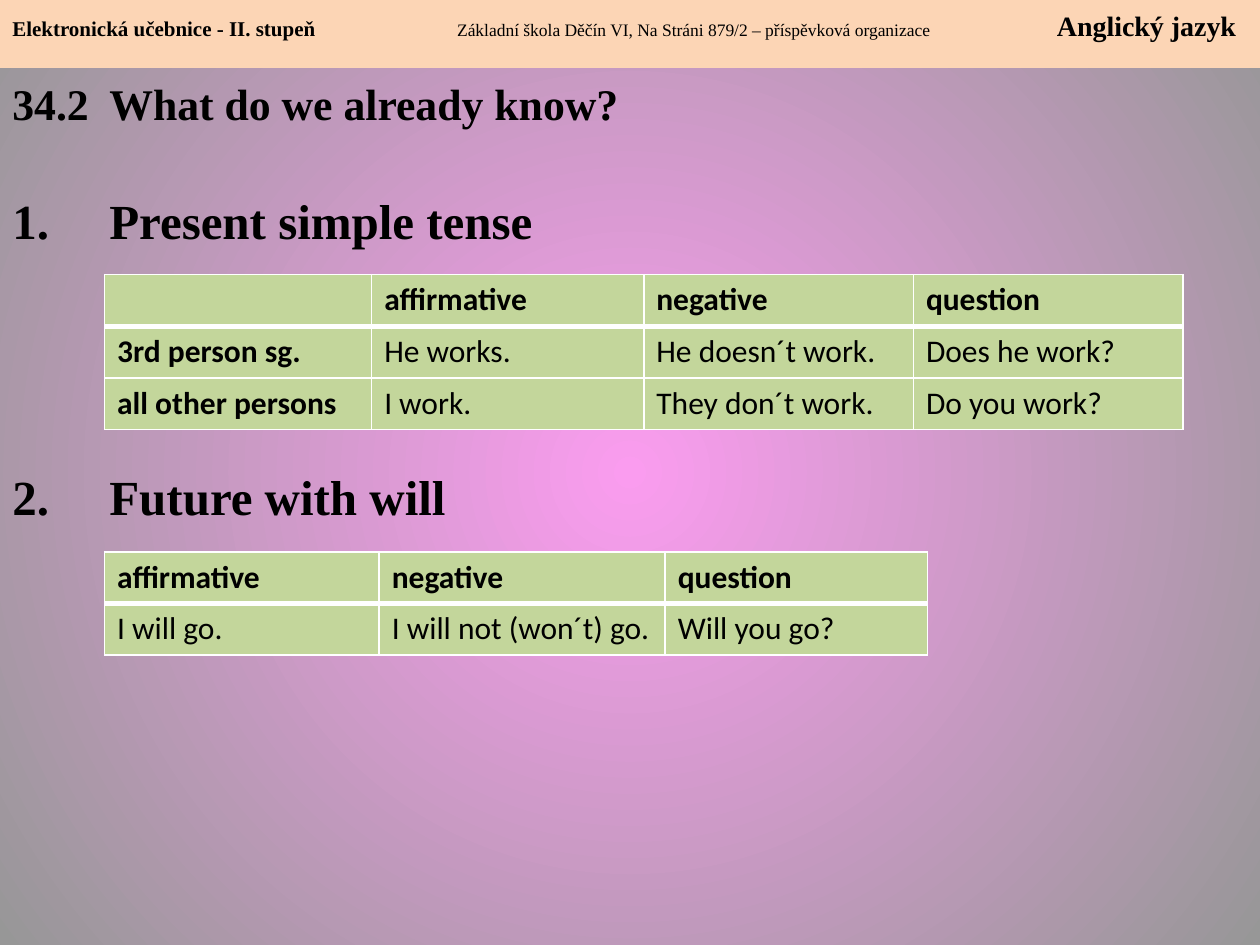
"""Build an English grammar review slide with two tense tables."""
from lxml import etree
from pptx import Presentation
from pptx import util as u
from pptx.dml import color
from pptx.enum import shapes, text
from pptx.oxml import ns


def rgb(value):
    return color.RGBColor.from_string(value)


def add_span(para, wording, font, size, bold):
    span = para.add_run()
    span.text = wording
    style = {"name": font, "size": u.Pt(size), "bold": bold}
    for name, value in style.items():
        setattr(span.font, name, value)
    span.font.color.rgb = rgb("000000")


SERIF = "Times New Roman"
deck = Presentation()
deck.slide_width, deck.slide_height = u.Inches(10), u.Inches(7.5)
page = deck.slides.add_slide(deck.slide_layouts[6])

backdrop = page.background.fill
backdrop.gradient()
for stop, shade in zip(backdrop.gradient_stops, ["FA9CEF", "979797"]):
    stop.color.rgb = rgb(shade)
gradient = next(page.element.iter(ns.qn("a:gradFill")))
gradient.remove(gradient.find(ns.qn("a:lin")))
circle = etree.SubElement(gradient, ns.qn("a:path"), path="circle")
etree.SubElement(circle, ns.qn("a:fillToRect"), l="50000", t="50000", r="50000", b="50000")

box = page.shapes.add_textbox(u.Inches(0), u.Inches(0.56), u.Inches(9.57), u.Inches(6.94))
box.text_frame.word_wrap = True
headings = [
    ("34.2\tWhat do we already know?", 25, 0, None),
    ("Present simple tense", 28, 35, 1),
    ("Future with will", 28, 124, 2),
]
for wording, size, gap, number in headings:
    first = box.text_frame.paragraphs[0]
    para = box.text_frame.add_paragraph() if first.runs else first
    para.space_before = u.Pt(gap)
    props = para._p.get_or_add_pPr()
    props.set("marL", str(u.Inches(0.77)))
    props.set("indent", str(-u.Inches(0.77)))
    if number:
        etree.SubElement(props, ns.qn("a:buFont"), typeface=SERIF)
        etree.SubElement(props, ns.qn("a:buAutoNum"), type="arabicPeriod", startAt=str(number))
    add_span(para, wording, SERIF, size, True)

band = page.shapes.add_shape(
    shapes.MSO_SHAPE.RECTANGLE, u.Inches(0), u.Inches(0), u.Inches(10), u.Inches(0.54))
band.shadow.inherit = False
band.fill.solid()
band.fill.fore_color.rgb = rgb("FCD5B5")
band.line.fill.background()
frame = band.text_frame
for name, value in {
    "word_wrap": True,
    "vertical_anchor": text.MSO_ANCHOR.TOP,
    "margin_top": u.Inches(0.07),
}.items():
    setattr(frame, name, value)
para = frame.paragraphs[0]
para.alignment = text.PP_ALIGN.LEFT
tabs = etree.SubElement(para._p.get_or_add_pPr(), ns.qn("a:tabLst"))
for place in [3.53, 8.29]:
    etree.SubElement(tabs, ns.qn("a:tab"), pos=str(u.Inches(place)), algn="l")
for wording, size, bold in [
    ("Elektronická učebnice - II. stupeň\t", 12, True),
    ("Základní škola Děčín VI, Na Stráni 879/2 – příspěvková organizace\t", 10, False),
    ("Anglický jazyk", 16, True),
]:
    add_span(para, wording, SERIF, size, bold)

tables = [
    (2.18, [2.12, 2.16, 2.14, 2.14], True, [
        ["", "affirmative", "negative", "question"],
        ["3rd person sg.", "He works.", "He doesn´t work.", "Does he work?"],
        ["all other persons", "I work.", "They don´t work.", "Do you work?"],
    ]),
    (4.38, [2.18, 2.27, 2.08], False, [
        ["affirmative", "negative", "question"],
        ["I will go.", "I will not (won´t) go.", "Will you go?"],
    ]),
]
for top, widths, row_labels, rows in tables:
    table = page.shapes.add_table(
        len(rows), len(widths), u.Inches(0.83), u.Inches(top),
        u.Inches(sum(widths)), u.Inches(0.41 * len(rows))).table
    table.first_col = row_labels
    for column, width in zip(table.columns, widths):
        column.width = u.Inches(width)
    for r, row in enumerate(rows):
        for c, wording in enumerate(row):
            cell = table.cell(r, c)
            props = cell._tc.get_or_add_tcPr()
            for side in "LRTB":
                thick = (r, side) in [(0, "B"), (1, "T")]
                edge = etree.SubElement(props, ns.qn(f"a:ln{side}"), w=str(u.Pt(3 if thick else 1)))
                paint = etree.SubElement(edge, ns.qn("a:solidFill"))
                etree.SubElement(paint, ns.qn("a:srgbClr"), val="FFFFFF")
            cell.fill.solid()
            cell.fill.fore_color.rgb = rgb("C3D69B")
            if wording:
                bold = r == 0 or (row_labels and c == 0)
                add_span(cell.text_frame.paragraphs[0], wording, "Calibri", 18, bold)

deck.save("out.pptx")
